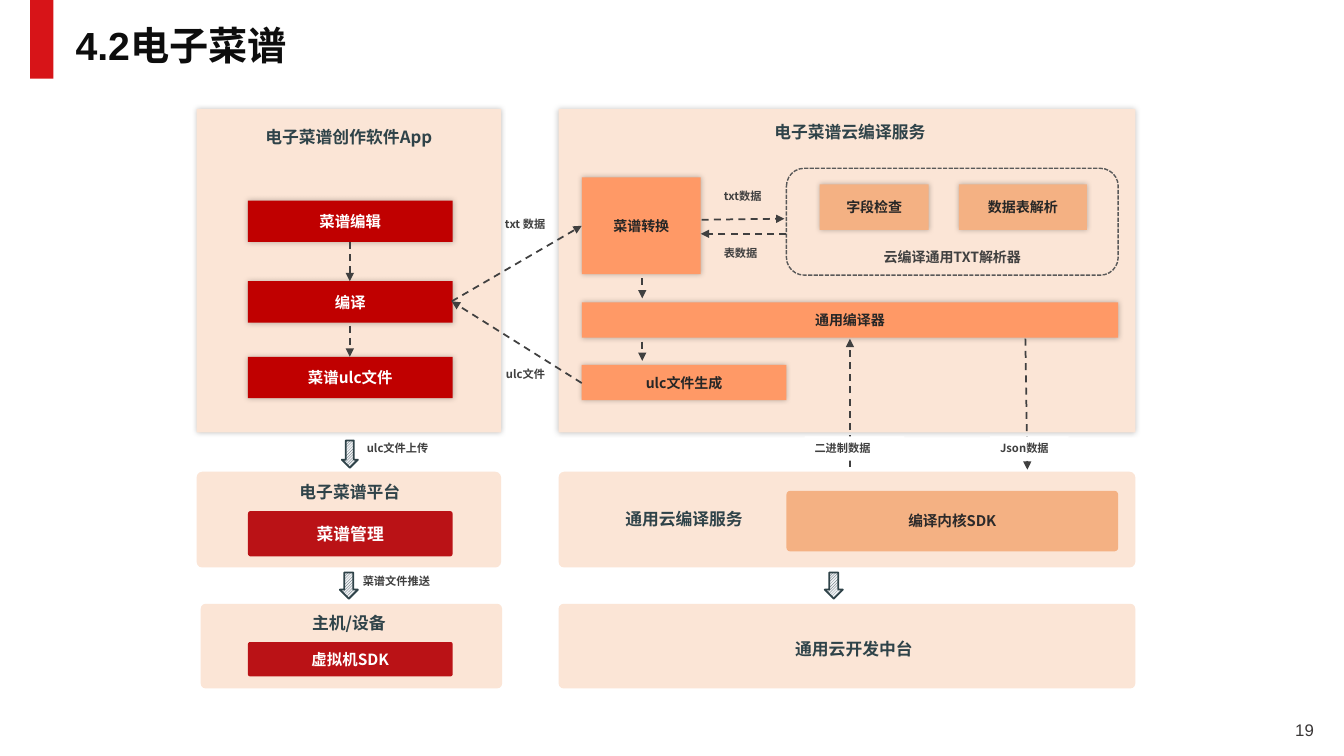
from lxml import etree
from pptx import Presentation
from pptx import util as u
from pptx.dml.color import RGBColor
from pptx.enum import dml, shapes, text
from pptx.oxml.ns import qn

NOTO = "Noto Sans CJK SC"
PALE, ORANGE, SAND = "FBE5D6", "FF9966", "F4B183"
RED, BRICK, WHITE = "C00000", "BA1216", "FFFFFF"
SLATE, GREY, INK = "2F4349", "404040", "262626"
RECT = shapes.MSO_SHAPE.RECTANGLE
ROUND = shapes.MSO_SHAPE.ROUNDED_RECTANGLE
MID, TOP = text.MSO_ANCHOR.MIDDLE, text.MSO_ANCHOR.TOP
LEFT, MIDDLE, RIGHT = text.PP_ALIGN.LEFT, text.PP_ALIGN.CENTER, text.PP_ALIGN.RIGHT


def tint(target, color):
    """Set a colour format from a hex string."""
    target.rgb = RGBColor.from_string(color)


def paint(shape, color):
    """Fill a shape with one colour."""
    shape.fill.solid()
    tint(shape.fill.fore_color, color)


def place(at):
    """Turn left, top, width and height into lengths."""
    return [u.Inches(n) for n in at]


def write(shape, words, size, color, align=MIDDLE, anchor=MID, font=NOTO, bold=True):
    """Write one line of styled text into a shape."""
    frame = shape.text_frame
    frame.word_wrap = True
    frame.vertical_anchor = anchor
    para = frame.paragraphs[0]
    para.alignment = align
    run = para.add_run()
    run.text = words
    run.font.size = u.Pt(size)
    run.font.bold = bold
    run.font.name = font
    tint(run.font.color, color)
    etree.SubElement(run.font._element, qn("a:ea"), typeface=NOTO)


def glow(shape):
    """Give a shape a soft grey shadow on all sides."""
    effect = shape._element.spPr.find(qn("a:effectLst"))
    outer = etree.SubElement(effect, qn("a:outerShdw"), blurRad="50800",
                             dist="0", algn="ctr", rotWithShape="0")
    black = etree.SubElement(outer, qn("a:srgbClr"), val="000000")
    etree.SubElement(black, qn("a:alpha"), val="26000")


def block(slide, at, color, kind=RECT):
    """Add a flat shape without outline."""
    shape = slide.shapes.add_shape(kind, *place(at))
    shape.shadow.inherit = False
    shape.line.fill.background()
    paint(shape, color)
    if kind == ROUND:
        shape.adjustments[0] = 0.06
    return shape


def card(slide, at, color, words="", size=10, ink=INK):
    """Add a square box with a soft shadow and a caption."""
    shape = block(slide, at, color)
    glow(shape)
    if words:
        write(shape, words, size, ink)


def pill(slide, at, color, words="", size=12, ink=WHITE):
    """Add a rounded box with a caption."""
    shape = block(slide, at, color, ROUND)
    if words:
        write(shape, words, size, ink)


def label(slide, at, words, size=12, color=SLATE, align=MIDDLE, back=None, **style):
    """Add a text box, on a plain ground if one is given."""
    box = slide.shapes.add_textbox(*place(at))
    if back:
        paint(box, back)
    write(box, words, size, color, align, TOP, **style)


def arrow(slide, *ends):
    """Add a dashed arrow between two points."""
    line = slide.shapes.add_connector(shapes.MSO_CONNECTOR.STRAIGHT, *place(ends))
    tint(line.line.color, GREY)
    line.line.width = u.Pt(1.25)
    line.line.dash_style = dml.MSO_LINE.DASH
    etree.SubElement(line.line._get_or_add_ln(), qn("a:tailEnd"), type="triangle")
    etree.SubElement(line._element.spPr, qn("a:effectLst"))


def chute(slide, at):
    """Add a hatched down arrow."""
    shape = slide.shapes.add_shape(shapes.MSO_SHAPE.DOWN_ARROW, *place(at))
    shape.shadow.inherit = False
    shape.fill.patterned()
    shape.fill.pattern = dml.MSO_PATTERN.DARK_UPWARD_DIAGONAL
    tint(shape.fill.fore_color, SLATE)
    tint(shape.fill.back_color, "F0F2F5")
    tint(shape.line.color, SLATE)
    shape.line.width = u.Pt(1.25)


def parser(slide, at, words):
    """Add the dashed frame of the parser."""
    shape = slide.shapes.add_shape(ROUND, *place(at))
    shape.shadow.inherit = False
    shape.fill.background()
    tint(shape.line.color, "595959")
    shape.line.width = u.Pt(1)
    shape.line.dash_style = dml.MSO_LINE.SQUARE_DOT
    write(shape, words, 10, GREY, anchor=text.MSO_ANCHOR.BOTTOM)


def head(slide):
    """Add the red bar, the title and the page number."""
    block(slide, (0.3, 0, 0.23, 0.78), "D71418")
    title = slide.shapes.title
    title.left, title.top, title.width, title.height = place((0.65, 0.23, 11.5, 0.49))
    write(title, "4.2电子菜谱", 28, "0D0D0D", LEFT, font="Arial")
    title.text_frame.paragraphs[0].line_spacing = 0.9
    label(slide, (10.13, 7.09, 3, 0.4), "19", 12, "3B3838", RIGHT,
          font="Arial", bold=False)


def app(slide):
    """Draw the left column: app, platform and device."""
    card(slide, (1.95, 1.08, 3.02, 3.21), PALE)
    label(slide, (2.26, 1.21, 2.4, 0.3), "电子菜谱创作软件App")
    for top, words in ((1.99, "菜谱编辑"), (2.79, "编译"), (3.54, "菜谱ulc文件")):
        card(slide, (2.46, top, 2.03, 0.41), RED, words, 11, WHITE)
    pill(slide, (1.95, 4.68, 3.02, 0.95), PALE)
    label(slide, (2.66, 4.73, 1.62, 0.3), "电子菜谱平台")
    pill(slide, (2.46, 5.07, 2.03, 0.45), BRICK, "菜谱管理")
    pill(slide, (1.99, 5.99, 2.99, 0.84), PALE)
    label(slide, (2.65, 6.03, 1.62, 0.3), "主机/设备")
    pill(slide, (2.46, 6.37, 2.03, 0.34), BRICK, "虚拟机SDK", 11)


def cloud(slide):
    """Draw the right column: compile services and platform."""
    card(slide, (5.54, 1.08, 5.72, 3.21), PALE)
    label(slide, (7.23, 1.16, 2.4, 0.3), "电子菜谱云编译服务")
    parser(slide, (7.8, 1.67, 3.29, 1.06), "云编译通用TXT解析器")
    for at, color, words in (
            ((5.77, 1.76, 1.18, 0.96), ORANGE, "菜谱转换"),
            ((8.13, 1.83, 1.08, 0.45), SAND, "字段检查"),
            ((9.51, 1.83, 1.27, 0.45), SAND, "数据表解析"),
            ((5.77, 3, 5.32, 0.35), ORANGE, "通用编译器"),
            ((5.77, 3.62, 2.03, 0.35), ORANGE, "ulc文件生成")):
        card(slide, at, color, words)
    pill(slide, (5.54, 4.68, 5.72, 0.95), PALE)
    label(slide, (5.9, 5, 1.77, 0.3), "通用云编译服务")
    pill(slide, (7.8, 4.87, 3.29, 0.6), SAND, "编译内核SDK", 10.5, "2C2A2A")
    pill(slide, (5.54, 5.99, 5.72, 0.84), PALE)
    label(slide, (6.37, 6.29, 4.2, 0.3), "通用云开发中台")


def flow(slide):
    """Draw the arrows and name the data they carry."""
    for ends in ((4.48, 2.99, 5.77, 2.24), (5.77, 3.8, 4.48, 2.99),
                 (6.96, 2.18, 7.78, 2.17), (7.8, 2.32, 6.95, 2.32),
                 (10.17, 3.36, 10.19, 4.66), (8.43, 4.63, 8.43, 3.36),
                 (3.47, 2.4, 3.47, 2.79), (3.47, 3.23, 3.47, 3.54),
                 (6.37, 2.76, 6.37, 2.96), (6.37, 3.39, 6.37, 3.58)):
        arrow(slide, *ends)
    for at in ((3.39, 4.37, 0.16, 0.27), (3.37, 5.68, 0.18, 0.26),
               (8.18, 5.68, 0.18, 0.26)):
        chute(slide, at)
    for left, top, width, words, back in (
            (4.91, 2.11, 0.81, "txt 数据", None),
            (4.92, 3.6, 0.69, "ulc文件", None),
            (7.08, 1.83, 0.69, "txt数据", None),
            (7.08, 2.39, 0.69, "表数据", None),
            (9.82, 4.33, 0.78, "Json数据", WHITE),
            (7.98, 4.33, 0.99, "二进制数据", WHITE),
            (3.54, 4.33, 1.09, "ulc文件上传", None),
            (3.5, 5.65, 1.37, "菜谱文件推送", None)):
        label(slide, (left, top, width, 0.24), words, 8, GREY, LEFT, back)


def main():
    """Build the slide and save it."""
    deck = Presentation()
    deck.slide_width, deck.slide_height = u.Inches(13.33), u.Inches(7.5)
    slide = deck.slides.add_slide(deck.slide_layouts[5])
    head(slide)
    app(slide)
    cloud(slide)
    flow(slide)
    deck.save("out.pptx")


if __name__ == "__main__":
    main()
